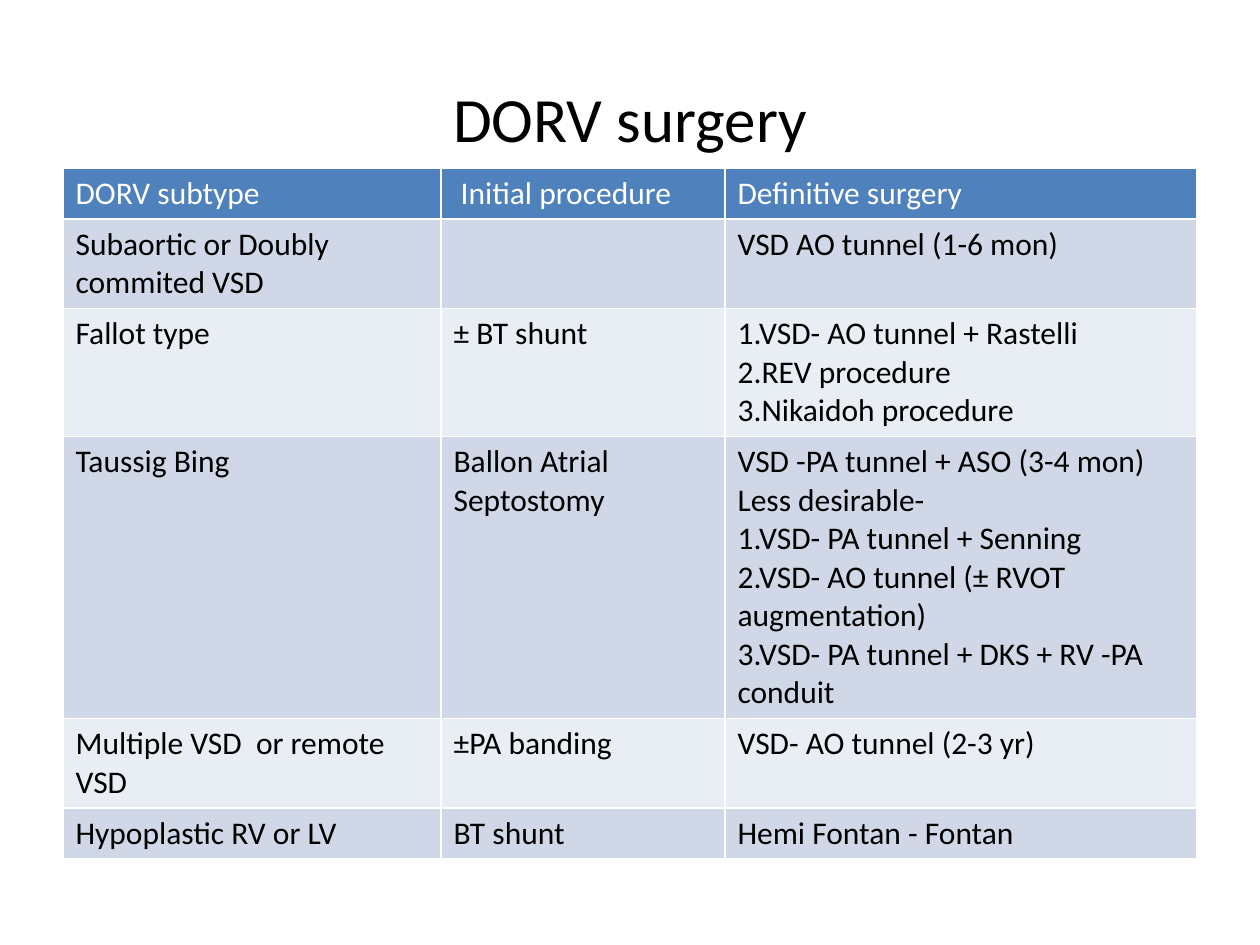
import dataclasses

import pptx
import pptx.dml.color
import pptx.enum.text
import pptx.util

PIXELS_PER_INCH = 126
FONT = "Calibri"
BLACK, WHITE = "000000", "FFFFFF"
HEADER_FILL = "4F81BD"
BAND_FILLS = ("E9EDF4", "D0D8E8")
COLUMN_WIDTHS = (378, 284, 472)


@dataclasses.dataclass
class TableRow:
    height: int
    subtype: str
    initial: str
    definitive: str


ROWS = [
    TableRow(51, "DORV subtype", " Initial procedure", "Definitive surgery"),
    TableRow(89, "Subaortic or Doubly commited VSD", "", "VSD AO tunnel (1-6 mon)"),
    TableRow(
        128,
        "Fallot type",
        "± BT shunt",
        "1.VSD- AO tunnel + Rastelli\n2.REV procedure\n3.Nikaidoh procedure",
    ),
    TableRow(
        282,
        "Taussig Bing",
        "Ballon Atrial Septostomy",
        "VSD -PA tunnel + ASO (3-4 mon)\n"
        "Less desirable-\n"
        "1.VSD- PA tunnel + Senning\n"
        "2.VSD- AO tunnel (± RVOT augmentation)\n"
        "3.VSD- PA tunnel + DKS + RV -PA conduit",
    ),
    TableRow(89, "Multiple VSD  or remote VSD", "±PA banding", "VSD- AO tunnel (2-3 yr)"),
    TableRow(51, "Hypoplastic RV or LV", "BT shunt", "Hemi Fontan - Fontan"),
]


def px(length: int) -> pptx.util.Emu:
    return pptx.util.Emu(round(length * 914400 / PIXELS_PER_INCH))


def color(value: str) -> pptx.dml.color.RGBColor:
    return pptx.dml.color.RGBColor.from_string(value)


def write_text(text_frame, text: str, size: int, text_color: str) -> None:
    text_frame.text = text
    for paragraph in text_frame.paragraphs:
        for run in paragraph.runs:
            run.font.name = FONT
            run.font.size = pptx.util.Pt(size)
            run.font.bold = False
            run.font.color.rgb = color(text_color)


def add_title(slide, text: str) -> None:
    title = slide.shapes.title
    title.left, title.top, title.width, title.height = map(px, (63, 38, 1134, 158))
    write_text(title.text_frame, text, 36, BLACK)
    title.text_frame.vertical_anchor = pptx.enum.text.MSO_ANCHOR.MIDDLE
    title.text_frame.paragraphs[0].alignment = pptx.enum.text.PP_ALIGN.CENTER


def add_surgery_table(slide, rows: list[TableRow]) -> None:
    height = sum(row.height for row in rows)
    table = slide.shapes.add_table(
        len(rows), len(COLUMN_WIDTHS), px(63), px(168), px(sum(COLUMN_WIDTHS)), px(height)
    ).table
    for column, width in zip(table.columns, COLUMN_WIDTHS):
        column.width = px(width)
    for index, row in enumerate(rows):
        table.rows[index].height = px(row.height)
        fill = BAND_FILLS[index % 2] if index else HEADER_FILL
        text_color = BLACK if index else WHITE
        texts = (row.subtype, row.initial, row.definitive)
        for cell, text in zip(table.rows[index].cells, texts):
            cell.fill.solid()
            cell.fill.fore_color.rgb = color(fill)
            write_text(cell.text_frame, text, 18, text_color)


def main() -> None:
    presentation = pptx.Presentation()
    presentation.slide_width = px(1260)
    presentation.slide_height = px(945)
    slide = presentation.slides.add_slide(presentation.slide_layouts[5])
    add_title(slide, "DORV surgery")
    add_surgery_table(slide, ROWS)
    presentation.save("out.pptx")


if __name__ == "__main__":
    main()
